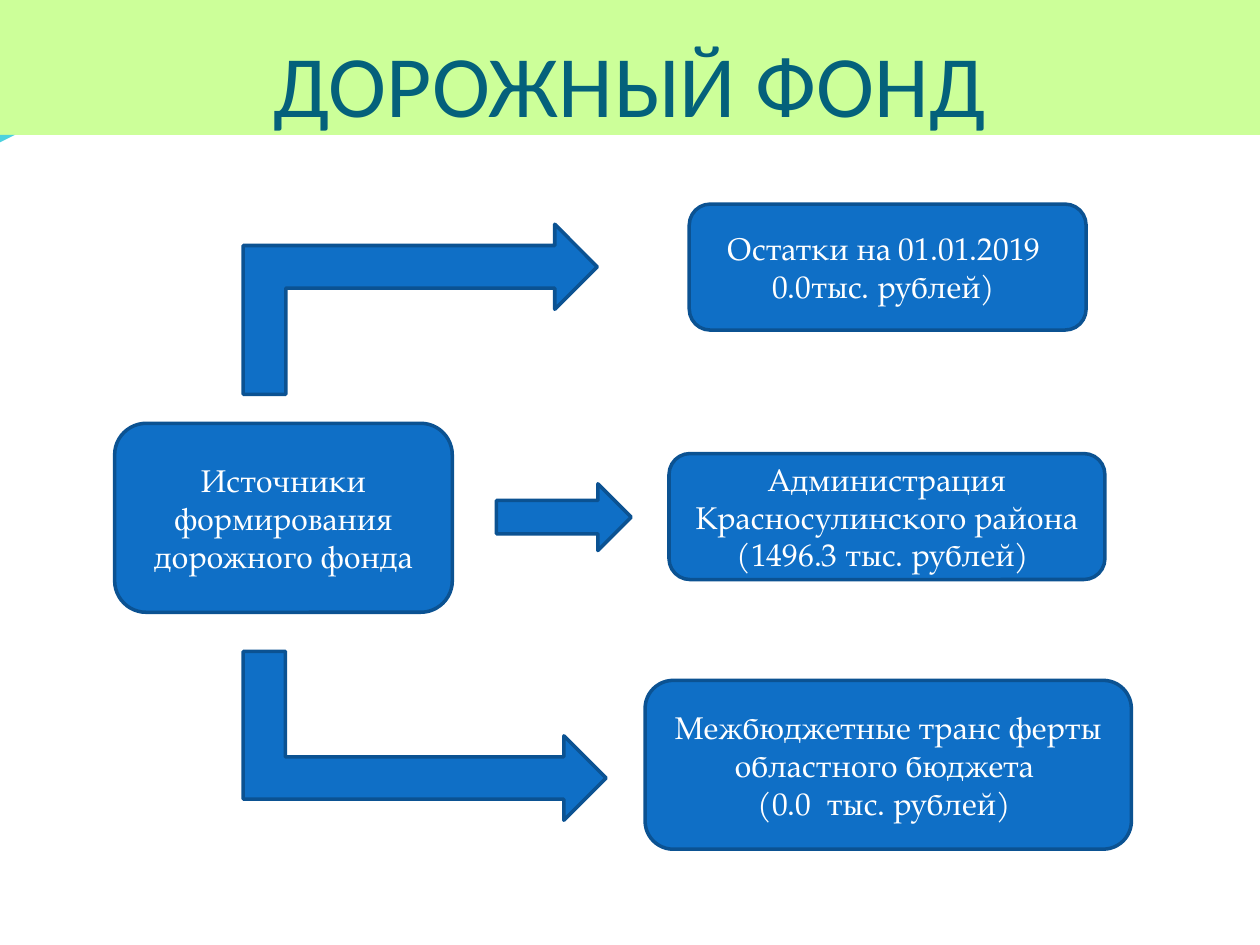
import pptx
import pptx.util
from pptx.dml.color import RGBColor
from pptx.enum.shapes import MSO_SHAPE
from pptx.enum.text import MSO_ANCHOR, MSO_AUTO_SIZE, PP_ALIGN

Inches, Pt = pptx.util.Inches, pptx.util.Pt

THEME = {
    "banner": RGBColor(0xCC, 0xFF, 0x99),
    "title": RGBColor(0x04, 0x61, 0x7B),
    "wave": RGBColor(0x4C, 0xD2, 0xDE),
    "fill": RGBColor(0x0F, 0x6F, 0xC6),
    "line": RGBColor(0x0B, 0x52, 0x92),
    "text": RGBColor(0xFF, 0xFF, 0xFF),
    "title_font": "Calibri",
    "body_font": "TeX Gyre Pagella",
    "title_size": Pt(50),
    "body_size": Pt(18),
    "line_width": Pt(2),
}


def write(tf, text, font, size, color):
    tf.word_wrap = True
    tf.text = text
    for p in tf.paragraphs:
        p.alignment = PP_ALIGN.CENTER
        for r in p.runs:
            r.font.name, r.font.size = font, size
            r.font.color.rgb = color


def add_block(kind, left, top, width, height):
    s = slide.shapes.add_shape(kind, Inches(left), Inches(top), Inches(width), Inches(height))
    s.shadow.inherit = False
    s.fill.solid()
    s.fill.fore_color.rgb = THEME["fill"]
    s.line.color.rgb = THEME["line"]
    s.line.width = THEME["line_width"]
    return s


prs = pptx.Presentation()
prs.slide_width, prs.slide_height = Inches(10), Inches(7.5)
slide = prs.slides.add_slide(prs.slide_layouts[5])

# Title banner
title = slide.shapes.title
title.left, title.top, title.width, title.height = 0, 0, Inches(10), Inches(1.07)
title.fill.solid()
title.fill.fore_color.rgb = THEME["banner"]
tf = title.text_frame
tf.auto_size = MSO_AUTO_SIZE.NONE
tf.vertical_anchor = MSO_ANCHOR.BOTTOM
tf.margin_left = tf.margin_right = tf.margin_bottom = 0
tf.margin_top = Inches(0.05)
write(tf, "ДОРОЖНЫЙ ФОНД", THEME["title_font"], THEME["title_size"], THEME["title"])

# Tip of the wave under the banner
builder = slide.shapes.build_freeform(0, Inches(1.07))
builder.add_line_segments([(Inches(0.12), Inches(1.07)), (0, Inches(1.13))])
wave = builder.convert_to_shape()
wave.shadow.inherit = False
wave.fill.solid()
wave.fill.fore_color.rgb = THEME["wave"]
wave.line.fill.background()

# Fund and its sources
boxes = [
    (0.91, 3.36, 2.68, 1.5, "Источники формирования дорожного фонда"),
    (5.47, 1.62, 3.15, 1, "Остатки на 01.01.2019 \n0.0тыс. рублей) "),
    (5.31, 3.6, 3.46, 1, "Администрация Красносулинского района (1496.3 тыс. рублей) "),
    (5.12, 5.4, 3.86, 1.34, "Межбюджетные транс ферты областного бюджета \n(0.0  тыс. рублей) "),
]
for left, top, width, height, text in boxes:
    s = add_block(MSO_SHAPE.ROUNDED_RECTANGLE, left, top, width, height)
    s.text_frame.vertical_anchor = MSO_ANCHOR.MIDDLE
    write(s.text_frame, text, THEME["body_font"], THEME["body_size"], THEME["text"])

# Arrows to the three sources
add_block(MSO_SHAPE.RIGHT_ARROW, 3.94, 3.84, 1.07, 0.53)
upper = add_block(MSO_SHAPE.BENT_UP_ARROW, 2.66, 1.05, 1.35, 2.81)
upper.rotation = 270
upper._element.spPr.xfrm.set("flipV", "1")
lower = add_block(MSO_SHAPE.BENT_UP_ARROW, 2.7, 4.4, 1.34, 2.88)
lower.rotation = 90

prs.save("out.pptx")
